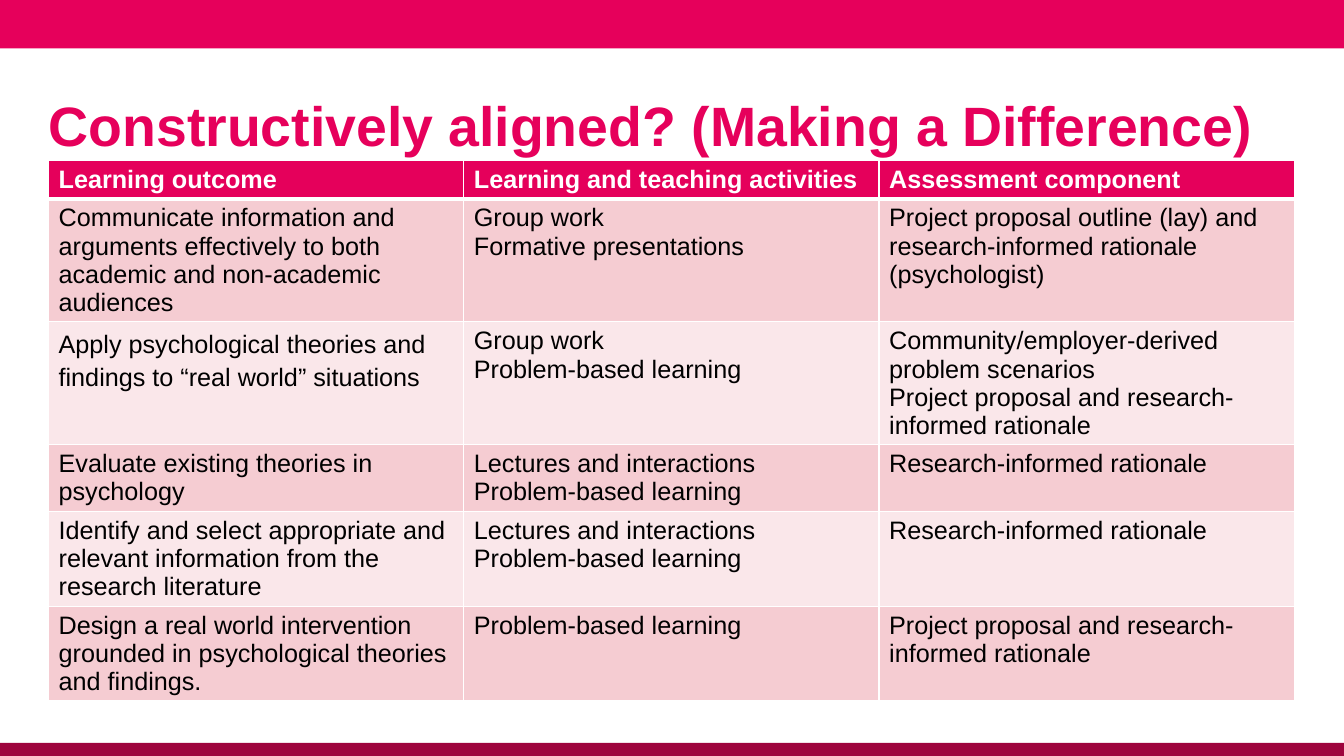
import pptx
import pptx.dml.color
import pptx.enum.shapes
import pptx.enum.text
import pptx.oxml
import pptx.oxml.ns
import pptx.util

COLORS = {
    "white": "FFFFFF",
    "black": "000000",
    "pink": "E6005B",
    "crimson": "9E043D",
    "header": "E5005B",
    "odd_row": "F5CCD2",
    "even_row": "FAE7EA",
}
SLIDE_WIDTH, SLIDE_HEIGHT = 960, 540
LEFT, CONTENT_WIDTH = 34.7, 889.9

HEADINGS = ["Learning outcome", "Learning and teaching activities", "Assessment component"]
ALIGNMENT_ROWS = [
    (83.5, [["Communicate information and arguments effectively to both academic and non-academic audiences"],
            ["Group work", "Formative presentations"],
            ["Project proposal outline (lay) and research-informed rationale (psychologist)"]]),
    (83.5, [["Apply psychological theories and findings to “real world” situations"],
            ["Group work", "Problem-based learning"],
            ["Community/employer-derived problem scenarios",
             "Project proposal and research-informed rationale"]]),
    (44.6, [["Evaluate existing theories in psychology"],
            ["Lectures and interactions", "Problem-based learning"],
            ["Research-informed rationale"]]),
    (64, [["Identify and select appropriate and relevant information from the research literature"],
          ["Lectures and interactions", "Problem-based learning"],
          ["Research-informed rationale"]]),
    (64, [["Design a real world intervention grounded in psychological theories and findings."],
          ["Problem-based learning"],
          ["Project proposal and research-informed rationale"]]),
]


class SlideBuilder:
    font = "Arial"
    body_size = 18
    title_size = 39.6

    def __init__(self, slide):
        self.slide = slide

    def color(self, name):
        return pptx.dml.color.RGBColor.from_string(COLORS[name])

    def box(self, left, top, width, height):
        return [pptx.util.Pt(value) for value in (left, top, width, height)]

    def bar(self, top, height, color):
        shape = self.slide.shapes.add_shape(
            pptx.enum.shapes.MSO_SHAPE.RECTANGLE, *self.box(0, top, SLIDE_WIDTH, height))
        shape.shadow.inherit = False
        shape.fill.solid()
        shape.fill.fore_color.rgb = self.color(color)
        shape.line.fill.background()

    def add_lines(self, frame, lines, size, color, bold):
        for index, line in enumerate(lines):
            paragraph = frame.add_paragraph() if index else frame.paragraphs[0]
            run = paragraph.add_run()
            run.text = line
            run.font.name = self.font
            run.font.size = pptx.util.Pt(size)
            run.font.bold = bold
            run.font.color.rgb = self.color(color)

    def title(self, text, top, height):
        shape = self.slide.shapes.add_textbox(*self.box(LEFT, top, CONTENT_WIDTH, height))
        frame = shape.text_frame
        frame.word_wrap = True
        frame.margin_left = 0
        frame.vertical_anchor = pptx.enum.text.MSO_ANCHOR.MIDDLE
        self.add_lines(frame, [text], self.title_size, "pink", True)

    def borders(self, cell, top, bottom):
        properties = cell._tc.get_or_add_tcPr()
        for side, width in (("L", 1), ("R", 1), ("T", top), ("B", bottom)):
            properties.append(pptx.oxml.parse_xml(
                f'<a:ln{side} {pptx.oxml.ns.nsdecls("a")} w="{pptx.util.Pt(width)}">'
                f'<a:solidFill><a:srgbClr val="{COLORS["white"]}"/></a:solidFill></a:ln{side}>'))

    def cell(self, cell, lines, fill, color="black", bold=False, top=1, bottom=1):
        self.borders(cell, top, bottom)
        cell.fill.solid()
        cell.fill.fore_color.rgb = self.color(fill)
        self.add_lines(cell.text_frame, lines, self.body_size, color, bold)

    def table(self, top, headings, header_height, rows):
        heights = [header_height] + [height for height, cells in rows]
        table = self.slide.shapes.add_table(
            len(heights), len(headings),
            *self.box(LEFT, top, CONTENT_WIDTH, sum(heights))).table
        for row, height in zip(table.rows, heights):
            row.height = pptx.util.Pt(height)
        for column, heading in enumerate(headings):
            table.columns[column].width = pptx.util.Pt(CONTENT_WIDTH / len(headings))
            self.cell(table.cell(0, column), [heading], "header", "white", True, bottom=3)
        for index, (height, cells) in enumerate(rows, start=1):
            fill = "odd_row" if index % 2 else "even_row"
            for column, lines in enumerate(cells):
                self.cell(table.cell(index, column), lines, fill, top=3 if index == 1 else 1)
        return table


def main():
    presentation = pptx.Presentation()
    presentation.slide_width = pptx.util.Pt(SLIDE_WIDTH)
    presentation.slide_height = pptx.util.Pt(SLIDE_HEIGHT)
    builder = SlideBuilder(presentation.slides.add_slide(presentation.slide_layouts[6]))
    builder.bar(0, 34.6, "pink")
    builder.bar(530.6, 9.4, "crimson")
    table = builder.table(114.7, HEADINGS, 26, ALIGNMENT_ROWS)
    table.cell(2, 0).text_frame.paragraphs[0].line_spacing = 1.15
    builder.title("Constructively aligned? (Making a Difference)", 63.4, 51.1)
    presentation.save("out.pptx")


if __name__ == "__main__":
    main()
